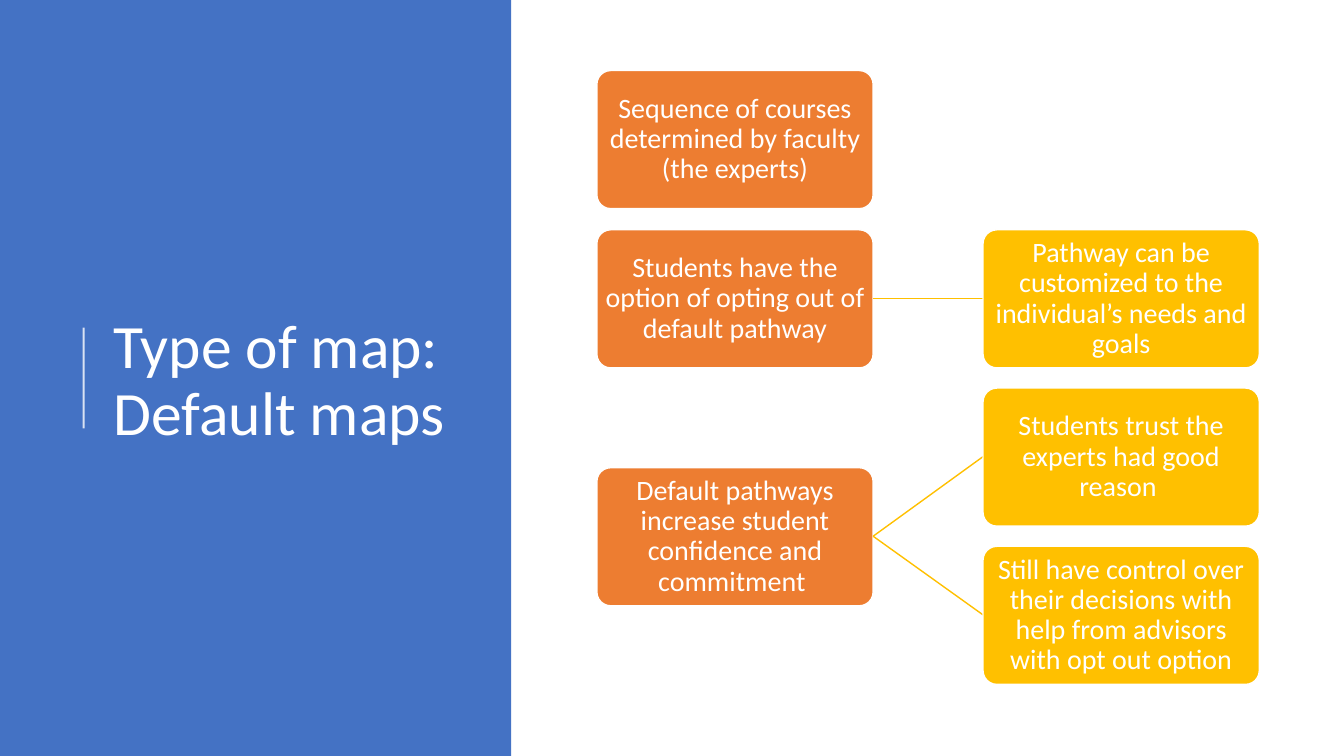
"""Build the slide on default maps."""
from lxml.etree import SubElement
from pptx import Presentation
from pptx.dml.color import RGBColor
from pptx.enum.shapes import MSO_CONNECTOR, MSO_SHAPE
from pptx.enum.text import MSO_ANCHOR, PP_ALIGN
from pptx.oxml.ns import qn
from pptx.util import Pt

PX = 9144
WHITE, BLUE, ORANGE, GOLD = "FFFFFF", "4472C4", "ED7D31", "FFC000"
BOX_W, BOX_H = 274, 137
COLUMNS = [(592, ORANGE), (975, GOLD)]
TOP, HALF_ROW = 70, 78.75


def write(sp, text, size, align, inset):
    tf = sp.text_frame
    margins = {f"margin_{side}": inset * PX for side in ("left", "right", "top", "bottom")}
    for name, value in {"word_wrap": True, "vertical_anchor": MSO_ANCHOR.MIDDLE, **margins}.items():
        setattr(tf, name, value)
    p = tf.paragraphs[0]
    p.alignment, p.line_spacing = align, 0.9
    r = p.add_run()
    r.text = text
    for name, value in {"name": "Calibri", "size": Pt(size)}.items():
        setattr(r.font, name, value)
    r.font.color.rgb = RGBColor.from_string(WHITE)


def connect(x1, y1, x2, y2, color, width):
    ends = [v * PX for v in (x1, y1, x2, y2)]
    line = s.shapes.add_connector(MSO_CONNECTOR.STRAIGHT, *ends)
    line.line.color.rgb = RGBColor.from_string(color)
    line.line.width = Pt(width)
    SubElement(line._element.spPr, qn("a:effectLst"))
    return line


prs = Presentation()
prs.slide_width, prs.slide_height = 1333 * PX, 750 * PX
s = prs.slides.add_slide(prs.slide_layouts[6])

panel = s.shapes.add_shape(MSO_SHAPE.RECTANGLE, 0, 0, 507 * PX, 750 * PX)
panel.shadow.inherit = False
panel.fill.solid()
panel.fill.fore_color.rgb = RGBColor.from_string(BLUE)
panel.line.fill.background()

rule = connect(83, 425, 83, 325, WHITE, 1.5)
SubElement(rule._element.spPr.find(".//" + qn("a:srgbClr")), qn("a:alpha"), val="80000")

title = s.shapes.add_textbox(103 * PX, 78 * PX, 369 * PX, 602 * PX)
write(title, "Type of map: Default maps", 44, PP_ALIGN.LEFT, 10)

boxes = [
    (0, 0, None, "Sequence of courses determined by faculty (the experts)"),
    (0, 2, None, "Students have the option of opting out of default pathway"),
    (1, 2, 2, "Pathway can be customized to the individual’s needs and goals"),
    (0, 5, None, "Default pathways increase student confidence and commitment "),
    (1, 4, 5, "Students trust the experts had good reason "),
    (1, 6, 5, "Still have control over their decisions with help from advisors with opt out option"),
]
for column, step, parent, text in boxes:
    x, color = COLUMNS[column]
    y = round(TOP + HALF_ROW * step)
    if parent is not None:
        parent_y = round(TOP + HALF_ROW * parent)
        connect(COLUMNS[0][0] + BOX_W, parent_y + BOX_H // 2, x, y + BOX_H // 2, GOLD, 1)
    sp = s.shapes.add_shape(MSO_SHAPE.ROUNDED_RECTANGLE, x * PX, y * PX, BOX_W * PX, BOX_H * PX)
    sp.adjustments[0] = 0.1
    sp.shadow.inherit = False
    sp.fill.solid()
    sp.fill.fore_color.rgb = RGBColor.from_string(color)
    sp.line.color.rgb = RGBColor.from_string(WHITE)
    sp.line.width = Pt(1)
    write(sp, text, 20, PP_ALIGN.CENTER, 1)

prs.save("out.pptx")
